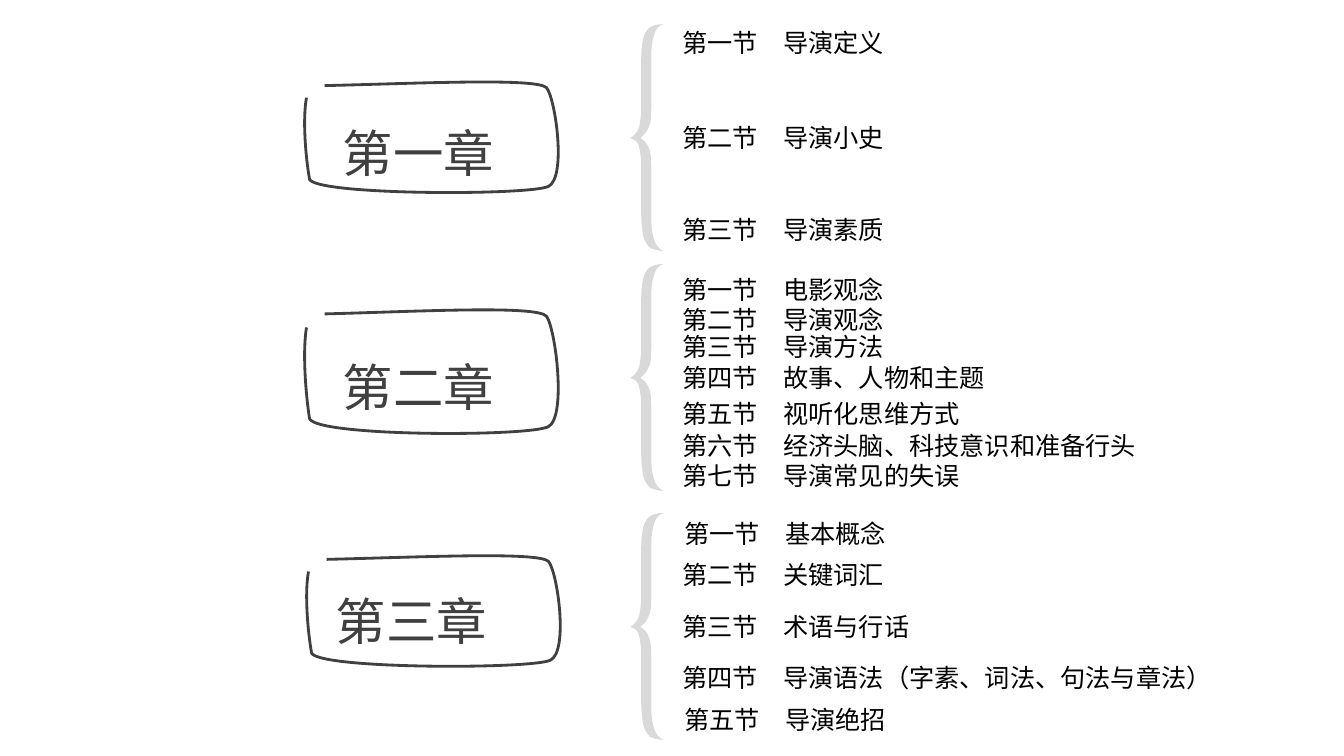
from lxml import etree
from pptx import Presentation
from pptx.dml.color import RGBColor
from pptx.enum.text import MSO_AUTO_SIZE
from pptx.oxml.ns import qn
from pptx.util import Inches, Pt

FIT_SHAPE = MSO_AUTO_SIZE.SHAPE_TO_FIT_TEXT
COLORS = {"ink": "404040", "brace": "D9D9D9", "section": "000000"}
FONT = "Arial"

# Content: frame is left, top, width, height; title is left, top, width;
# each section is left, top, number, name
CHAPTERS = [
    {"title": "第一章", "frame": (3.02, 0.81, 2.52, 1.1), "title_at": (3.19, 0.86, 2.14),
     "brace_top": 0.24,
     "sections": [
         (6.67, 0.22, "第一节", "导演定义"),
         (6.67, 1.16, "第二节", "导演小史"),
         (6.67, 2.08, "第三节", "导演素质")]},
    {"title": "第二章", "frame": (3.02, 3.07, 2.52, 1.23), "title_at": (3.19, 3.18, 2.21),
     "brace_top": 2.62,
     "sections": [
         (6.67, 2.67, "第一节", "电影观念"),
         (6.67, 2.97, "第二节", "导演观念"),
         (6.67, 3.24, "第三节", "导演方法"),
         (6.67, 3.55, "第四节", "故事、人物和主题"),
         (6.67, 3.9, "第五节", "视听化思维方式"),
         (6.67, 4.22, "第六节", "经济头脑、科技意识和准备行头"),
         (6.67, 4.52, "第七节", "导演常见的失误")]},
    {"title": "第三章", "frame": (3.04, 5.51, 2.52, 1.1), "title_at": (3.12, 5.51, 2.36),
     "brace_top": 5.09,
     "sections": [
         (6.69, 5.09, "第一节", "基本概念"),
         (6.67, 5.5, "第二节", "关键词汇"),
         (6.67, 6.02, "第三节", "术语与行话"),
         (6.67, 6.52, "第四节", "导演语法（字素、词法、句法与章法）"),
         (6.69, 6.94, "第五节", "导演绝招")]},
]

# Outlines relative to their top left corner: a start point, then
# one point for a straight line or three for a Bezier curve
FRAME_HEIGHT = 1.1
FRAME = [
    [(0.2, 0.04)],
    [(1.09, 0.02), (2.3, -0.04), (2.4, 0.06)],
    [(2.49, 0.17), (2.6, 0.95), (2.42, 1.04)],
    [(2.23, 1.13), (0.13, 1.13), (0.05, 0.97)],
    [(0.01, 0.74), (-0.02, 0.37), (0.02, 0.16)],
]
BRACE_LEFT, BRACE_WIDTH, BRACE_HEIGHT = 6.25, 0.33, 2.25
BRACE = [
    [(0.21, 0.33)],
    [(0.21, 0.23), (0.22, 0.15), (0.24, 0.1)],
    [(0.25, 0.05), (0.29, 0.01), (0.33, 0)],
    [(0.25, 0), (0.19, 0.02), (0.16, 0.07)],
    [(0.13, 0.11), (0.11, 0.21), (0.11, 0.36)],
    [(0.11, 0.82)],
    [(0.11, 0.91), (0.1, 0.97), (0.09, 1.02)],
    [(0.07, 1.07), (0.05, 1.1), (0, 1.13)],
    [(0.05, 1.14), (0.08, 1.17), (0.09, 1.22)],
    [(0.1, 1.26), (0.11, 1.33), (0.11, 1.43)],
    [(0.11, 1.86)],
    [(0.11, 1.96), (0.12, 2.04), (0.13, 2.1)],
    [(0.14, 2.15), (0.17, 2.19), (0.2, 2.22)],
    [(0.23, 2.23), (0.27, 2.25), (0.33, 2.25)],
    [(0.29, 2.23), (0.25, 2.19), (0.24, 2.14)],
    [(0.22, 2.09), (0.21, 2.02), (0.21, 1.92)],
    [(0.21, 1.49)],
    [(0.21, 1.37), (0.21, 1.29), (0.19, 1.24)],
    [(0.17, 1.18), (0.14, 1.15), (0.1, 1.13)],
    [(0.14, 1.1), (0.17, 1.06), (0.19, 1.01)],
    [(0.21, 0.97), (0.21, 0.89), (0.21, 0.78)],
]


def add_outline(page, outline, left, top, width, height, stretch=1, close=False):
    # The diagonal fixes the bounds; the curves then take its place
    builder = page.shapes.build_freeform(Inches(left), Inches(top))
    builder.add_line_segments([(Inches(left + width), Inches(top + height))], close=False)
    shape = builder.convert_to_shape()
    shape.shadow.inherit = False
    route = next(shape.element.iter(qn("a:path")))
    for step in list(route):
        route.remove(step)
    for index, points in enumerate(outline):
        kind = "a:moveTo" if index == 0 else "a:lnTo" if len(points) == 1 else "a:cubicBezTo"
        step = etree.SubElement(route, qn(kind))
        for x, y in points:
            etree.SubElement(step, qn("a:pt"), x=str(int(Inches(x))),
                             y=str(int(Inches(y * stretch))))
    if close:
        etree.SubElement(route, qn("a:close"))
    return shape


def add_text(page, text, left, top, width, height, size, color, indent=0.1, spacing=1.0):
    box = page.shapes.add_textbox(*map(Inches, (left, top, width, height)))
    frame = box.text_frame
    frame.word_wrap = True
    frame.auto_size = FIT_SHAPE
    frame.margin_left = Inches(indent)
    para = frame.paragraphs[0]
    para.line_spacing = spacing
    span = para.add_run()
    span.text = text
    for name, value in {"name": FONT, "size": Pt(size)}.items():
        setattr(span.font, name, value)
    span.font.color.rgb = RGBColor.from_string(COLORS[color])


def main():
    deck = Presentation()
    deck.slide_width, deck.slide_height = Inches(13.33), Inches(7.5)
    page = deck.slides.add_slide(deck.slide_layouts[6])

    for chapter in CHAPTERS:
        # Hand-drawn frame with the chapter title
        bounds = chapter["frame"]
        frame = add_outline(page, FRAME, *bounds, stretch=bounds[3] / FRAME_HEIGHT)
        frame.fill.background()
        frame.line.color.rgb = RGBColor.from_string(COLORS["ink"])
        frame.line.width = Pt(2)
        add_text(page, chapter["title"], *chapter["title_at"], 1.01, 36, "ink",
                 indent=0.21, spacing=1.5)

        # Brace
        brace = add_outline(page, BRACE, BRACE_LEFT, chapter["brace_top"],
                            BRACE_WIDTH, BRACE_HEIGHT, close=True)
        brace.fill.solid()
        brace.fill.fore_color.rgb = RGBColor.from_string(COLORS["brace"])
        brace.line.fill.background()

        # Sections
        for left, top, number, name in chapter["sections"]:
            width = 1.6 + 0.27 * len(name)
            add_text(page, f"{number}\t{name}", left, top, width, 0.4, 18, "section")

    deck.save("out.pptx")


if __name__ == "__main__":
    main()
